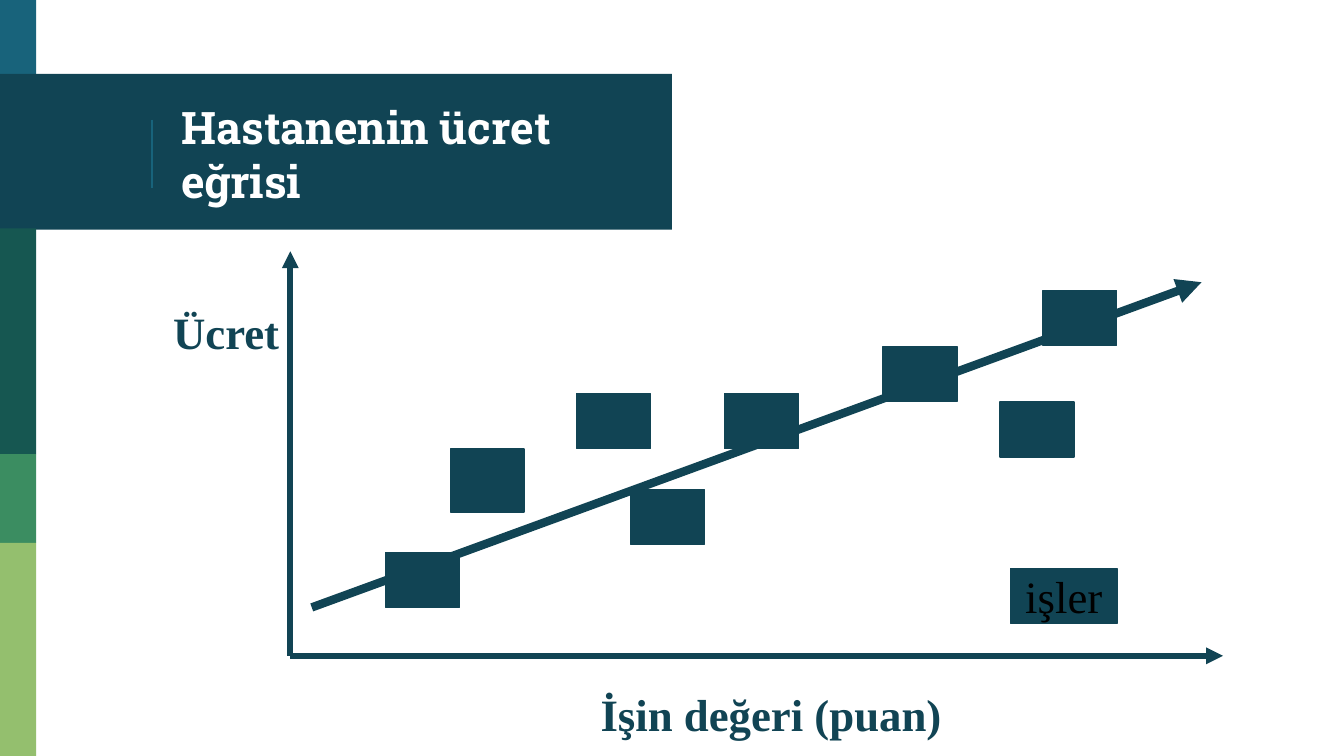
from pptx import Presentation
from pptx import util as u
from pptx.dml.color import RGBColor
from pptx.enum import shapes, text
from pptx.oxml.ns import qn
from lxml import etree

PX = 9144  # EMU per px, 100 px to the inch
C = {"navy": "114454", "blue": "18637B", "teal": "165751", "green": "3B8D61",
     "lime": "94BF6E", "white": "FFFFFF", "black": "000000"}

prs = Presentation()
prs.slide_width = 1000 * PX
prs.slide_height = prs.slide_width * 9 // 16
s = prs.slides.add_slide(prs.slide_layouts[6])


def line(x1, y1, x2, y2, color, width, arrow=True):
    sp = s.shapes.add_connector(shapes.MSO_CONNECTOR.STRAIGHT,
                                x1 * PX, y1 * PX, x2 * PX, y2 * PX)
    sp.line.color.rgb = RGBColor.from_string(C[color])
    sp.line.width = u.Pt(width)
    spPr = sp._element.spPr
    if arrow:
        etree.SubElement(spPr.find(qn("a:ln")), qn("a:tailEnd"), type="triangle")
    etree.SubElement(spPr, qn("a:effectLst"))


def write(sp, words, font, color, bold=True):
    p = sp.text_frame.paragraphs[0]
    r = p.add_run()
    r.text = words
    r.font.name, r.font.size, r.font.bold = font, u.Pt(24), bold
    r.font.color.rgb = RGBColor.from_string(C[color])
    return p


# Side strip, title band and job boxes
strip = [(0, 0, 27, 58, "blue"), (0, 55, 500, 116, "navy"), (0, 170, 27, 168, "teal"),
         (0, 338, 27, 66, "green"), (0, 404, 27, 159, "lime")]
jobs = [(287, 411), (469, 364), (429, 293), (539, 293), (657, 258), (776, 216), (744, 299)]
boxes = [(x, y, 55, 41, "navy") for x, y in jobs]
boxes += [(335, 334, 55, 47, "navy"), (752, 423, 79, 41, "navy")]
for x, y, w, h, color in strip + boxes:
    sp = s.shapes.add_shape(shapes.MSO_SHAPE.RECTANGLE, x * PX, y * PX, w * PX, h * PX)
    sp.shadow.inherit = False
    sp.fill.solid()
    sp.fill.fore_color.rgb = RGBColor.from_string(C[color])
    if (x, y, w, h, color) in strip:
        sp.line.fill.background()
    else:
        sp.line.color.rgb = RGBColor.from_string(C[color])
        sp.line.width = u.Pt(0.75)

# Legend label goes in the last box
tf = sp.text_frame
tf.word_wrap = False
tf.vertical_anchor = text.MSO_ANCHOR.MIDDLE
write(sp, "işler", "Times New Roman", "black", False).alignment = text.PP_ALIGN.CENTER

# Title with its divider
line(113, 89, 113, 140, "blue", 0.75, arrow=False)
sp = s.shapes.add_textbox(125 * PX, 58 * PX, 351 * PX, 112 * PX)
tf = sp.text_frame
tf.word_wrap = True
tf.vertical_anchor = text.MSO_ANCHOR.MIDDLE
tf.margin_top = tf.margin_bottom = 10 * PX
write(sp, "Hastanenin ücret eğrisi", "Roboto Slab", "white").line_spacing = 1.0

# Axes and wage curve
line(216, 488, 910, 488, "navy", 3)
line(216, 488, 216, 187, "navy", 3)
line(232, 452, 894, 210, "navy", 4.5)

# Axis labels
for x, y, w, words in [(437, 506, 307, "İşin değeri (puan)"), (119, 222, 150, "Ücret")]:
    sp = s.shapes.add_textbox(x * PX, y * PX, w * PX, 50 * PX)
    sp.text_frame.word_wrap = True
    write(sp, words, "Times New Roman", "navy")

prs.save("out.pptx")
